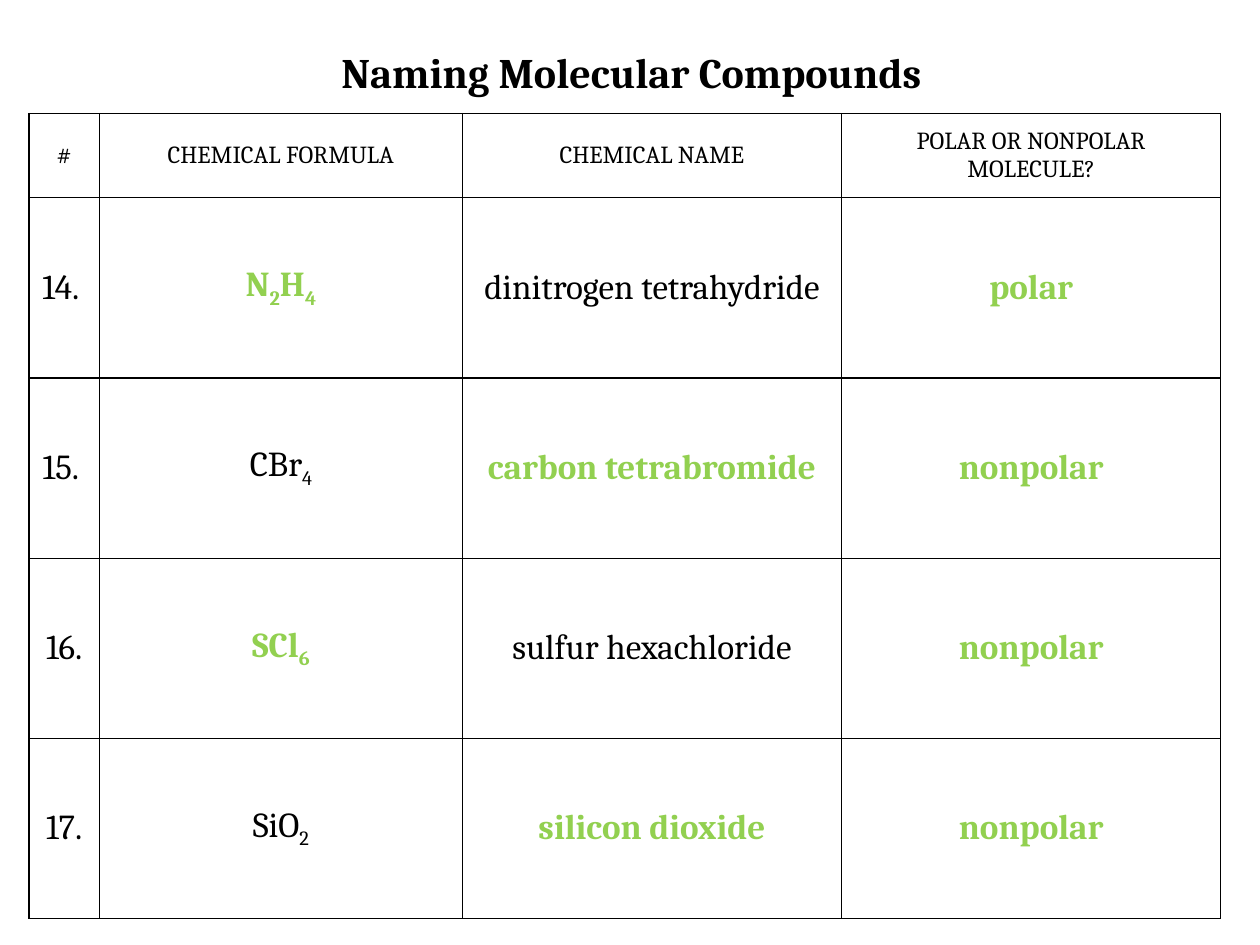
from dataclasses import dataclass
from itertools import groupby

from lxml.etree import SubElement
from pptx import Presentation
from pptx.dml.color import RGBColor
from pptx.enum.text import MSO_ANCHOR, MSO_AUTO_SIZE, PP_ALIGN
from pptx.oxml.ns import qn
from pptx.util import Inches, Pt


@dataclass(frozen=True)
class Theme:
    font: str = "Cambria"
    ink: str = "000000"
    answer: str = "92D050"
    title_size: int = 24
    header_size: int = 14
    body_size: int = 20
    border: float = 0.75
    inset: float = 0.1


HEADERS = ["#", "CHEMICAL FORMULA", "CHEMICAL NAME", "POLAR OR NONPOLAR MOLECULE?"]
# number, formula, name, polarity, columns that hold answers
COMPOUNDS = [
    ("14. ", "N2H4", "dinitrogen tetrahydride", "polar", (1, 3)),
    ("15. ", "CBr4", "carbon tetrabromide", "nonpolar", (2, 3)),
    ("16.", "SCl6", "sulfur hexachloride", "nonpolar", (1, 3)),
    ("17.", "SiO2", "silicon dioxide", "nonpolar", (2, 3)),
]
FORMULA_COL = 1
COL_WIDTHS = [0.56, 2.88, 3.01, 3.01]
ROW_HEIGHTS = [0.67] + [1.43] * len(COMPOUNDS)


class SlideBuilder:
    def __init__(self, slide, theme):
        self.slide = slide
        self.theme = theme

    def run(self, p, text, size, color, bold=False):
        r = p.add_run()
        r.text = text
        values = {"name": self.theme.font, "size": Pt(size), "bold": bold}
        for name, value in values.items():
            setattr(r.font, name, value)
        r.font.color.rgb = RGBColor.from_string(color)
        return r

    def formula(self, p, text, *style):
        """Write a chemical formula with its digits as subscripts."""
        for is_digit, chars in groupby(text, str.isdigit):
            r = self.run(p, "".join(chars), *style)
            if is_digit:
                r._r.get_or_add_rPr().set("baseline", "-25000")

    def margins(self, target):
        for side in ("left", "top", "right", "bottom"):
            setattr(target, f"margin_{side}", Inches(self.theme.inset))

    def title(self, text, left, top, width, height):
        sp = self.slide.shapes.title
        sp.left, sp.top = Inches(left), Inches(top)
        sp.width, sp.height = Inches(width), Inches(height)
        tf = sp.text_frame
        values = {"word_wrap": True, "auto_size": MSO_AUTO_SIZE.NONE,
                  "vertical_anchor": MSO_ANCHOR.BOTTOM}
        for name, value in values.items():
            setattr(tf, name, value)
        self.margins(tf)
        p = tf.paragraphs[0]
        p.alignment = PP_ALIGN.CENTER
        self.run(p, text, self.theme.title_size, self.theme.ink, True)

    def borders(self, cell):
        tc_pr = cell._tc.get_or_add_tcPr()
        for tag in ("a:lnL", "a:lnR", "a:lnT", "a:lnB"):
            ln = SubElement(tc_pr, qn(tag), w=str(Pt(self.theme.border)))
            fill = SubElement(ln, qn("a:solidFill"))
            SubElement(fill, qn("a:srgbClr"), val=self.theme.ink)

    def cell(self, cell):
        """Style an empty cell and return its paragraph."""
        self.borders(cell)
        cell.fill.background()
        cell.vertical_anchor = MSO_ANCHOR.MIDDLE
        self.margins(cell)
        p = cell.text_frame.paragraphs[0]
        p.alignment = PP_ALIGN.CENTER
        return p

    def compound_table(self, left, top):
        t = self.theme
        table = self.slide.shapes.add_table(
            len(ROW_HEIGHTS), len(COL_WIDTHS), Inches(left), Inches(top),
            Inches(sum(COL_WIDTHS)), Inches(sum(ROW_HEIGHTS))).table
        table.first_row = table.horz_banding = False
        for col, width in zip(table.columns, COL_WIDTHS):
            col.width = Inches(width)
        for row, height in zip(table.rows, ROW_HEIGHTS):
            row.height = Inches(height)
        for j, header in enumerate(HEADERS):
            self.run(self.cell(table.cell(0, j)), header, t.header_size, t.ink)
        for i, (*texts, answers) in enumerate(COMPOUNDS, 1):
            for j, text in enumerate(texts):
                write = self.formula if j == FORMULA_COL else self.run
                bold = j in answers
                color = t.answer if bold else t.ink
                write(self.cell(table.cell(i, j)), text, t.body_size, color, bold)


def main():
    prs = Presentation()
    prs.slide_width, prs.slide_height = Inches(10), Inches(7.5)
    title_only = prs.slide_layouts[5]
    builder = SlideBuilder(prs.slides.add_slide(title_only), Theme())
    builder.compound_table(0.23, 0.9)
    builder.title("Naming Molecular Compounds", 1.05, 0.27, 7.92, 0.6)
    prs.save("out.pptx")


if __name__ == "__main__":
    main()
